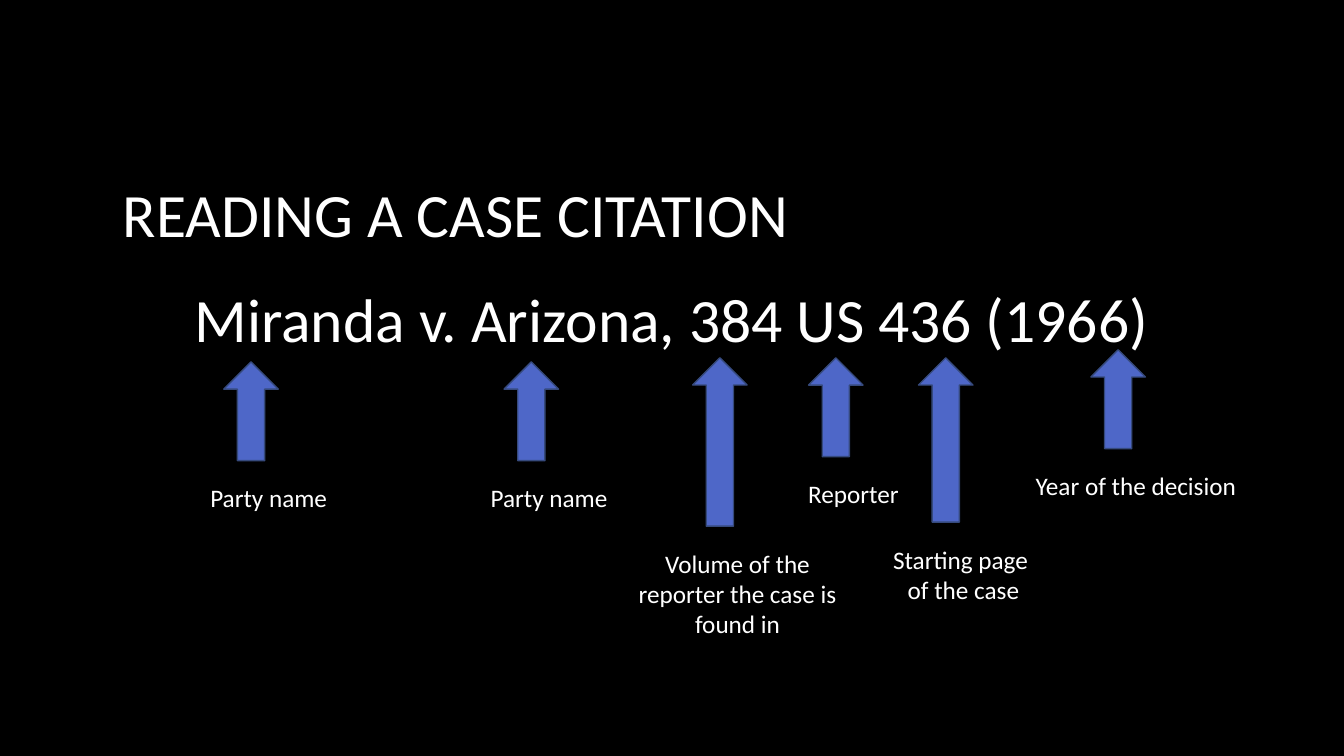
import pptx
import pptx.util
import pptx.dml.color
import pptx.enum.shapes
import pptx.enum.text

Inches = pptx.util.Inches
Pt = pptx.util.Pt
Align = pptx.enum.text.PP_ALIGN
Anchor = pptx.enum.text.MSO_ANCHOR
hues = {"back": "000000", "text": "FFFFFF", "arrow": "4E67C8", "edge": "364A7D"}


def color(name):
    return pptx.dml.color.RGBColor.from_string(hues[name])


def write(home, text, left, top, width, height, size=18, align=Align.CENTER,
          anchor=Anchor.TOP, space=1.0, grow=False):
    box = home.add_textbox(Inches(left), Inches(top), Inches(width), Inches(height))
    frame = box.text_frame
    frame.word_wrap = True
    frame.vertical_anchor = anchor
    if grow:
        frame.auto_size = pptx.enum.text.MSO_AUTO_SIZE.SHAPE_TO_FIT_TEXT
    frame.text = text
    for para in frame.paragraphs:
        para.alignment = align
        para.line_spacing = space
        font = para.runs[0].font
        font.name = "Calibri"
        font.size = Pt(size)
        font.color.rgb = color("text")


# Slide
deck = pptx.Presentation()
deck.slide_width = Inches(13.33)
deck.slide_height = Inches(7.5)
slide = deck.slides.add_slide(deck.slide_layouts[6])
slide.background.fill.solid()
slide.background.fill.fore_color.rgb = color("back")

# Title and citation
write(slide.shapes, "READING A CASE CITATION", 1.12, 1.81, 11.5, 0.7,
      size=44, align=Align.LEFT, anchor=Anchor.MIDDLE, space=0.9)
write(slide.shapes, "Miranda v. Arizona, 384 US 436 (1966)", 1, 2.59, 11.33, 3.74,
      size=44, space=1.2)

# Arrows with their labels: text, left, top, arrow height, label height
parts = [
    ("Party name", 2.22, 3.59, 0.98, 0.4),
    ("Party name", 5, 3.59, 0.98, 0.4),
    ("Volume of the reporter the case is found in", 6.87, 3.55, 1.67, 1.01),
    ("Reporter", 8.02, 3.55, 0.98, 0.4),
    ("Starting page \nof the case", 9.11, 3.55, 1.63, 0.71),
    ("Year of the decision", 10.82, 3.47, 0.98, 0.4),
]
for text, left, top, tall, high in parts:
    group = slide.shapes.add_group_shape()
    arrow = group.shapes.add_shape(pptx.enum.shapes.MSO_SHAPE.UP_ARROW, Inches(left),
                                   Inches(top), Inches(0.54), Inches(tall))
    arrow.shadow.inherit = False
    arrow.fill.solid()
    arrow.fill.fore_color.rgb = color("arrow")
    arrow.line.color.rgb = color("edge")
    arrow.line.width = Pt(1)
    write(group.shapes, text, left - 0.78, top + tall + 0.17, 2.45, high, grow=True)

deck.save("out.pptx")
